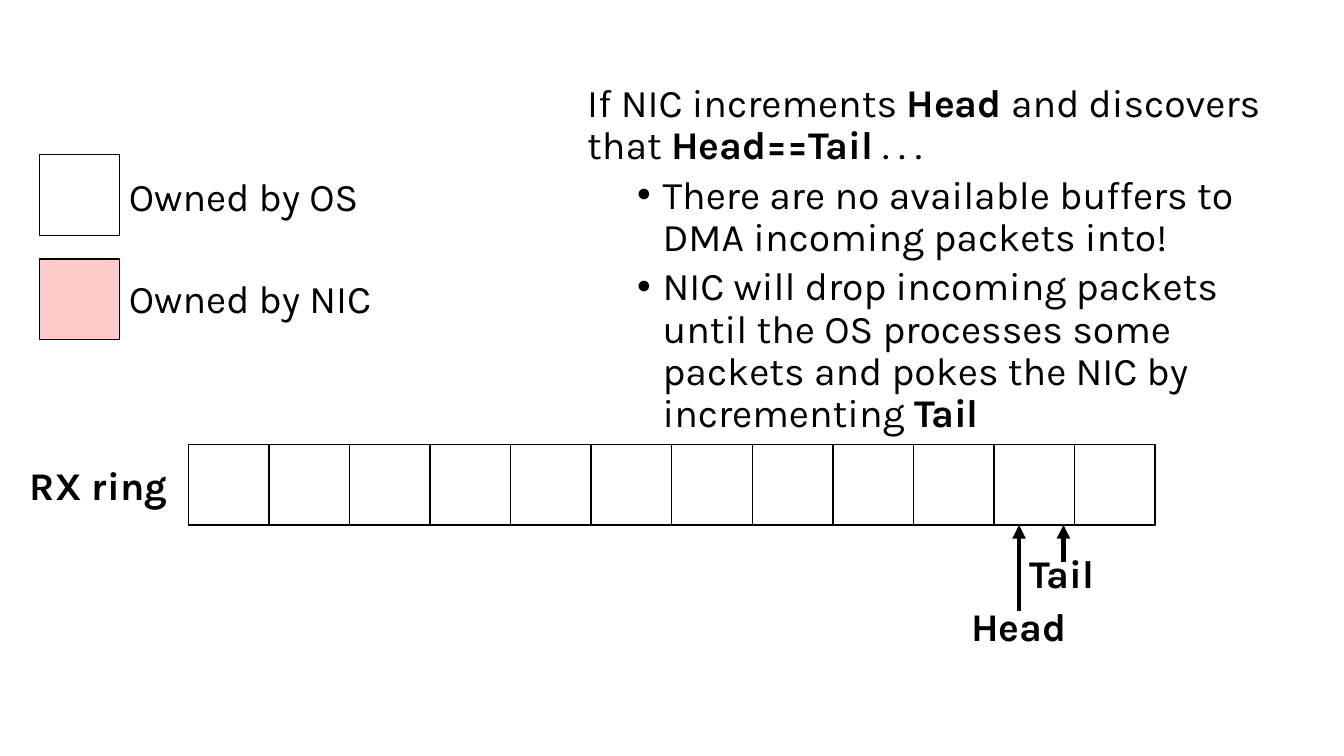
import pptx
import pptx.dml.color
import pptx.enum.shapes
import pptx.enum.text
import pptx.oxml
import pptx.oxml.ns
import pptx.util
from pptx.util import Cm

COLOURS = {"ink": "000000", "os": "FFFFFF", "nic": "FFCCCC"}
CELL = 2.03
RING_LEFT, RING_TOP, RING_CELLS = 4.75, 11.2, 12
LABEL_HEIGHT = 1.45
FONT = {"name": "Karla", "size": pptx.util.Pt(28)}
LEFT = pptx.enum.text.PP_ALIGN.LEFT
CENTER = pptx.enum.text.PP_ALIGN.CENTER


def colour(name):
    """Return the named colour as an RGB value."""
    return pptx.dml.color.RGBColor.from_string(COLOURS[name])


def apply(target, values):
    """Set each attribute in values on target."""
    for attribute, value in values.items():
        setattr(target, attribute, value)


def add_buffer(shapes, left, top, owner):
    """Draw one square ring buffer in its owner's colour."""
    buffer = shapes.add_shape(pptx.enum.shapes.MSO_SHAPE.RECTANGLE,
                              Cm(left), Cm(top), Cm(CELL), Cm(CELL))
    buffer.shadow.inherit = False
    buffer.fill.solid()
    buffer.fill.fore_color.rgb = colour(owner)
    buffer.line.color.rgb = colour("ink")
    buffer.line.width = pptx.util.Pt(1)


def add_text(shapes, left, top, width, height):
    """Add a wrapping text box and return its text frame."""
    frame = shapes.add_textbox(Cm(left), Cm(top), Cm(width), Cm(height)).text_frame
    frame.word_wrap = True
    return frame


def write_runs(paragraph, runs, values):
    """Write (text, bold) runs and format their paragraph."""
    apply(paragraph, values)
    for text, bold in runs:
        run = paragraph.add_run()
        run.text = text
        apply(run.font, {**FONT, "bold": bold})
        run.font.color.rgb = colour("ink")


def add_label(shapes, text, left, top, width, bold, alignment):
    """Add a one-line label."""
    frame = add_text(shapes, left, top, width, LABEL_HEIGHT)
    frame.auto_size = pptx.enum.text.MSO_AUTO_SIZE.SHAPE_TO_FIT_TEXT
    write_runs(frame.paragraphs[0], [(text, bold)], {"alignment": alignment})


def add_pointer(slide, name, label_left, label_top, arrow_x, arrow_start):
    """Group a register name with an arrow up to the ring."""
    pointer = slide.shapes.add_group_shape().shapes
    add_label(pointer, name, label_left, label_top, 3.4, True, CENTER)
    arrow = pointer.add_connector(pptx.enum.shapes.MSO_CONNECTOR.STRAIGHT,
                                  Cm(arrow_x), Cm(arrow_start),
                                  Cm(arrow_x), Cm(RING_TOP + CELL))
    arrow.line.color.rgb = colour("ink")
    arrow.line.width = pptx.util.Pt(3.25)
    head = pptx.oxml.parse_xml(
        f'<a:tailEnd {pptx.oxml.ns.nsdecls("a")} type="triangle"/>')
    arrow.line._get_or_add_ln().append(head)
    arrow._element.spPr.append(
        pptx.oxml.parse_xml(f'<a:effectLst {pptx.oxml.ns.nsdecls("a")}/>'))


def add_bullet(paragraph):
    """Give a paragraph a hanging round bullet."""
    properties = paragraph._p.get_or_add_pPr()
    properties.set("marL", str(Cm(1.9)))
    properties.set("indent", str(-Cm(0.64)))
    namespace = pptx.oxml.ns.nsdecls("a")
    for markup in (f'<a:buFont {namespace} typeface="Arial"/>',
                   f'<a:buChar {namespace} char="•"/>'):
        properties.append(pptx.oxml.parse_xml(markup))


def add_explanation(slide):
    """Explain what happens when the ring is full."""
    frame = add_text(slide.shapes, 14.55, 1.98, 17.83, 8.79)
    write_runs(frame.paragraphs[0],
               [("If NIC increments ", False), ("Head", True),
                (" and discovers that ", False), ("Head==Tail", True),
                (" . . .", False)],
               {"line_spacing": 0.9, "space_before": pptx.util.Pt(10)})
    consequences = [
        [("There are no available buffers to DMA incoming packets into!", False)],
        [("NIC will drop incoming packets until the OS processes some packets "
          "and pokes the NIC by incrementing ", False), ("Tail", True)],
    ]
    for runs in consequences:
        paragraph = frame.add_paragraph()
        write_runs(paragraph, runs, {"level": 1, "line_spacing": 0.9,
                                     "space_before": pptx.util.Pt(5)})
        add_bullet(paragraph)


def main():
    """Build the receive ring slide."""
    deck = pptx.Presentation()
    apply(deck, {"slide_width": Cm(33.87), "slide_height": Cm(19.05)})
    slide = deck.slides.add_slide(deck.slide_layouts[6])

    for index in range(RING_CELLS):
        add_buffer(slide.shapes, RING_LEFT + index * CELL, RING_TOP, "os")
    add_label(slide.shapes, "RX ring", 0.25, 11.51, 4.47, True, CENTER)
    add_pointer(slide, "Head", 23.98, 15.06, 25.88 - 0.2, 15.39)
    add_pointer(slide, "Tail", 25.07, 13.72, 26.8, 14.17)
    add_explanation(slide)

    legend = [("os", "Owned by OS", 3.9, 4.22), ("nic", "Owned by NIC", 6.53, 6.78)]
    for owner, caption, square_top, caption_top in legend:
        add_buffer(slide.shapes, 0.99, square_top, owner)
        add_label(slide.shapes, caption, 3, caption_top, 6.81, False, LEFT)

    deck.save("out.pptx")


if __name__ == "__main__":
    main()
